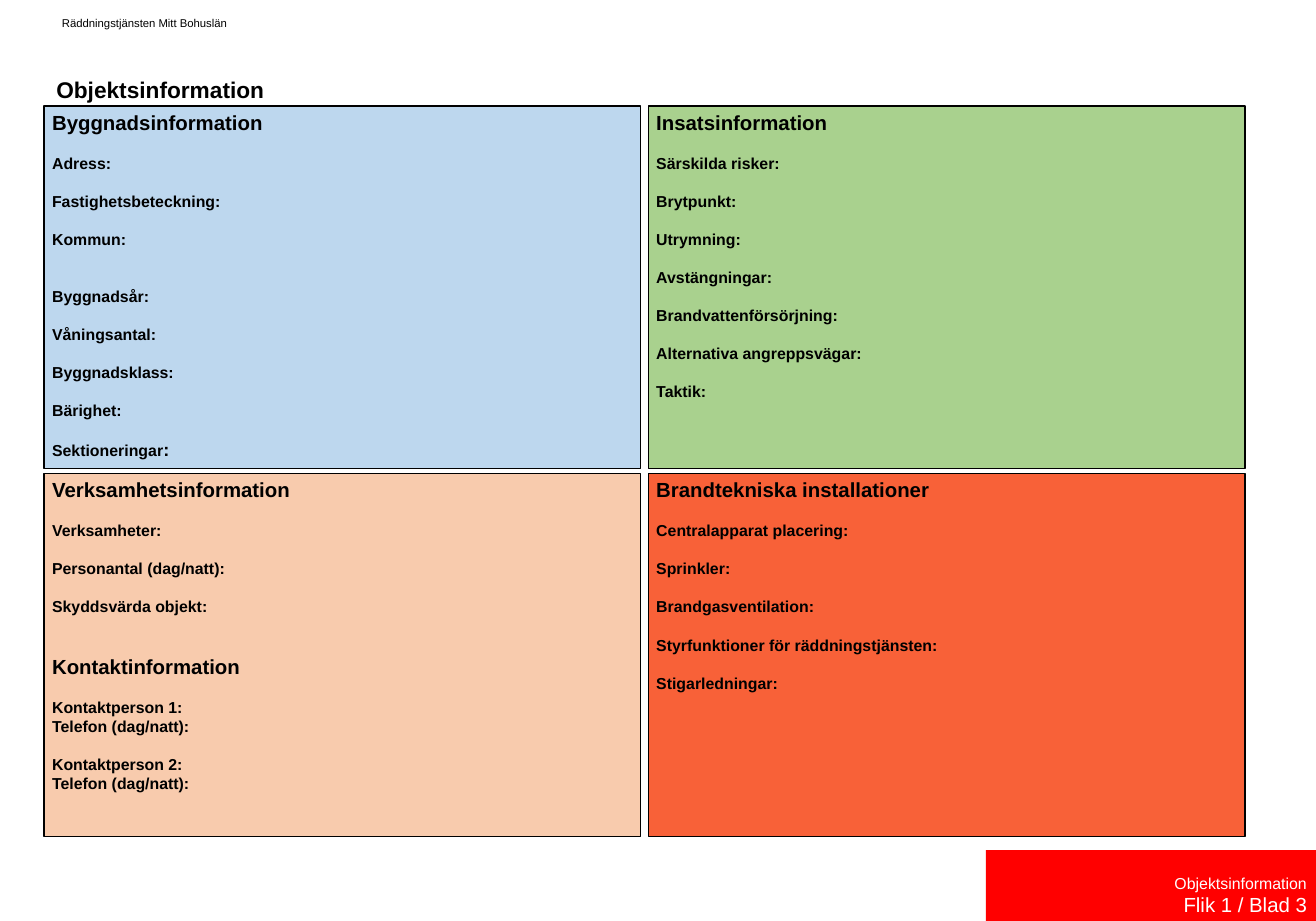
from dataclasses import dataclass

from pptx import Presentation
from pptx.dml.color import RGBColor
from pptx.enum.shapes import MSO_SHAPE
from pptx.enum.text import MSO_ANCHOR, PP_ALIGN
from pptx.util import Inches, Pt


@dataclass(frozen=True)
class Theme:
    font: str = "Arial"
    black: str = "000000"
    white: str = "FFFFFF"
    red: str = "FF0000"
    blue: str = "BDD7EE"
    green: str = "A9D18E"
    peach: str = "F8CBAD"
    orange: str = "F86138"
    header: int = 10
    label: int = 14
    large_colon: int = 16
    heading: int = 18
    title: int = 20
    blank_line: float = 16.8


@dataclass(frozen=True)
class Line:
    text: str
    size: int = Theme.label
    gap: int = 1  # blank lines above
    tail: str = ""  # closing run in a larger size


class ObjectSheet:
    def __init__(self, slide, theme):
        self.slide = slide
        self.theme = theme

    def set_lines(self, text_frame, lines, color, bold=False, align=PP_ALIGN.LEFT,
                  insets=(0.1, 0.05)):
        text_frame.word_wrap = True
        text_frame.margin_left = text_frame.margin_right = Inches(insets[0])
        text_frame.margin_top = text_frame.margin_bottom = Inches(insets[1])
        text_frame.text = "\n".join(line.text for line in lines)
        for paragraph, line in zip(text_frame.paragraphs, lines):
            paragraph.alignment = align
            if line.gap:
                paragraph.space_before = Pt(line.gap * self.theme.blank_line)
            if line.tail:
                paragraph.add_run().text = line.tail
            for run in paragraph.runs:
                run.font.name = self.theme.font
                run.font.size = Pt(line.size)
                run.font.bold = bold
                run.font.color.rgb = RGBColor.from_string(color)
            if line.tail:
                paragraph.runs[-1].font.size = Pt(self.theme.large_colon)

    def text(self, left, top, width, height, line, **style):
        box = self.slide.shapes.add_textbox(
            Inches(left), Inches(top), Inches(width), Inches(height))
        self.set_lines(box.text_frame, [line], self.theme.black, **style)
        return box

    def rectangle(self, left, top, width, height, fill, outline=None):
        shape = self.slide.shapes.add_shape(
            MSO_SHAPE.RECTANGLE, Inches(left), Inches(top), Inches(width), Inches(height))
        shape.shadow.inherit = False
        shape.fill.solid()
        shape.fill.fore_color.rgb = RGBColor.from_string(fill)
        if outline:
            shape.line.color.rgb = RGBColor.from_string(outline)
            shape.line.width = Pt(1)
        else:
            shape.line.fill.background()
        return shape

    def panel(self, column, row, fill, lines):
        shape = self.rectangle(0.54 + column * 7.41, 1.3 + row * 4.51, 7.32, 4.45,
                               fill, self.theme.black)
        shape.text_frame.vertical_anchor = MSO_ANCHOR.TOP
        self.set_lines(shape.text_frame, lines, self.theme.black, bold=True)

    def tab(self, lines):
        shape = self.rectangle(12.09, 10.43, 4.05, 0.87, self.theme.red)
        shape.text_frame.vertical_anchor = MSO_ANCHOR.BOTTOM
        self.set_lines(shape.text_frame, lines, self.theme.white,
                       align=PP_ALIGN.RIGHT, insets=(0.11, 0.05))


def main():
    theme = Theme()
    presentation = Presentation()
    presentation.slide_width = Inches(16.14)
    presentation.slide_height = Inches(11.3)
    slide = presentation.slides.add_slide(presentation.slide_layouts[6])
    sheet = ObjectSheet(slide, theme)

    # Header and title
    sheet.text(0.65, 0.15, 2.35, 0.28,
               Line("Räddningstjänsten Mitt Bohuslän", theme.header, 0),
               insets=(0.11, 0.05))
    title = sheet.text(0.54, 0.89, 2.92, 0.4,
                       Line("Objektsinformation", theme.title, 0),
                       bold=True, insets=(0.15, 0.08))
    title.text_frame.paragraphs[0].line_spacing = 0.9

    # Four information panels
    panels = [
        (theme.blue, [
            Line("Byggnadsinformation", theme.heading, 0),
            Line("Adress:"),
            Line("Fastighetsbeteckning:"),
            Line("Kommun:"),
            Line("Byggnadsår:", gap=2),
            Line("Våningsantal:"),
            Line("Byggnadsklass:"),
            Line("Bärighet:"),
            Line("Sektioneringar", tail=":"),
        ]),
        (theme.green, [
            Line("Insatsinformation", theme.heading, 0),
            Line("Särskilda risker:"),
            Line("Brytpunkt:"),
            Line("Utrymning:"),
            Line("Avstängningar:"),
            Line("Brandvattenförsörjning:"),
            Line("Alternativa angreppsvägar:"),
            Line("Taktik:"),
        ]),
        (theme.peach, [
            Line("Verksamhetsinformation", theme.heading, 0),
            Line("Verksamheter:"),
            Line("Personantal (dag/natt):"),
            Line("Skyddsvärda objekt:"),
            Line("Kontaktinformation", theme.heading, 2),
            Line("Kontaktperson 1:"),
            Line("Telefon (dag/natt):", gap=0),
            Line("Kontaktperson 2:"),
            Line("Telefon (dag/natt):", gap=0),
        ]),
        (theme.orange, [
            Line("Brandtekniska installationer", theme.heading, 0),
            Line("Centralapparat placering:"),
            Line("Sprinkler:"),
            Line("Brandgasventilation:"),
            Line("Styrfunktioner för räddningstjänsten:"),
            Line("Stigarledningar:"),
        ]),
    ]
    for index, (fill, lines) in enumerate(panels):
        row, column = divmod(index, 2)
        sheet.panel(column, row, fill, lines)

    # Red page tab
    sheet.tab([Line("Objektsinformation", gap=0),
               Line("Flik 1 / Blad 3", theme.heading, 0)])

    presentation.save("out.pptx")


if __name__ == "__main__":
    main()
